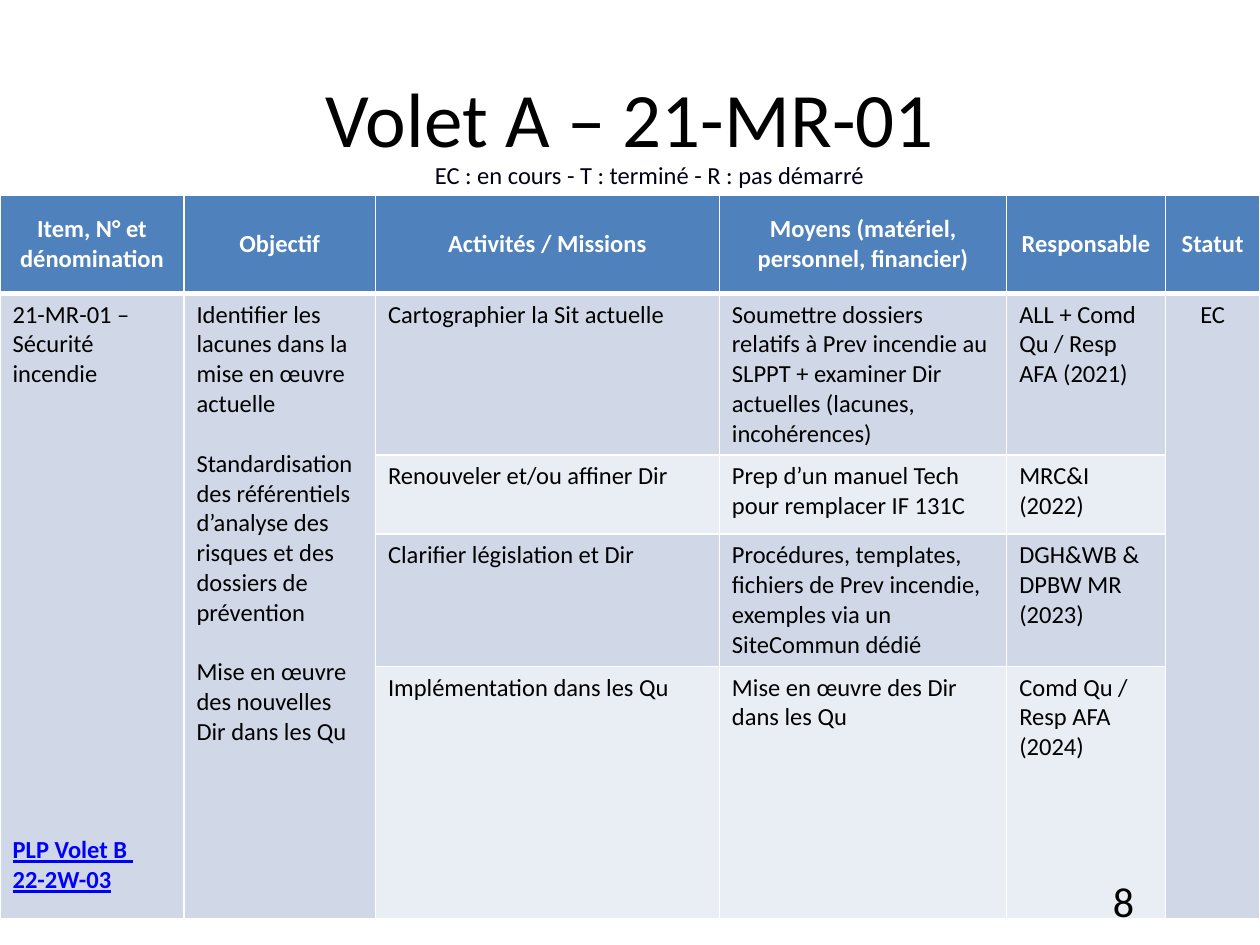
from lxml import etree
from pptx import Presentation
from pptx.dml.color import RGBColor
from pptx.enum import text as t
from pptx.oxml import ns
from pptx.util import Inches, Pt

FONT = "Calibri"
HEAD, DARK, LIGHT = "4F81BD", "D0D8E8", "E9EDF4"
WIDTHS = [1.46, 1.52, 2.73, 2.28, 1.26, 0.75]
HEIGHTS = [0.78, 1.28, 0.63, 1.05, 2]
TITLES = ["Item, N° et dénomination", "Objectif", "Activités / Missions",
          "Moyens (matériel, personnel, financier)", "Responsable", "Statut"]
GOALS = ["Identifier les lacunes dans la mise en œuvre actuelle",
         "Standardisation des référentiels d’analyse des risques "
         "et des dossiers de prévention",
         "Mise en œuvre des nouvelles Dir dans les Qu"]
# Activity, means, person in charge
TASKS = [
    ("Cartographier la Sit actuelle",
     "Soumettre dossiers relatifs à Prev incendie au SLPPT + examiner "
     "Dir actuelles (lacunes, incohérences)",
     "ALL + Comd Qu / Resp AFA (2021)"),
    ("Renouveler et/ou affiner Dir",
     "Prep d’un manuel Tech pour remplacer IF 131C",
     "MRC&I (2022)"),
    ("Clarifier législation et Dir",
     "Procédures, templates, fichiers de Prev incendie, exemples via un "
     "SiteCommun dédié",
     "DGH&WB & DPBW MR (2023)"),
    ("Implémentation dans les Qu",
     "Mise en œuvre des Dir dans les Qu",
     "Comd Qu / Resp AFA (2024)"),
]


def color(code):
    return RGBColor.from_string(code)


def write(frame, words, size=14, ink="000000", bold=False, under=False,
          align=t.PP_ALIGN.LEFT, gap=0, more=False):
    """Fill the frame, or add a paragraph to it when more is set."""
    par = frame.add_paragraph() if more else frame.paragraphs[0]
    par.text = words
    par.alignment = align
    par.space_before = Pt(gap)
    for run in par.runs:
        font = run.font
        font.name, font.size = FONT, Pt(size)
        font.bold, font.underline = bold, under
        font.color.rgb = color(ink)


def label(slide, box, words, anchor=t.MSO_ANCHOR.MIDDLE, **look):
    frame = slide.shapes.add_textbox(*map(Inches, box)).text_frame
    frame.word_wrap = True
    frame.vertical_anchor = anchor
    write(frame, words, **look)


def paint(cell, fill, top=1, bottom=1):
    """White borders, then the fill."""
    props = cell._tc.get_or_add_tcPr()
    for side, width in zip("LRTB", (1, 1, top, bottom)):
        line = etree.SubElement(props, ns.qn("a:ln" + side), w=str(Pt(width)))
        solid = etree.SubElement(line, ns.qn("a:solidFill"))
        etree.SubElement(solid, ns.qn("a:srgbClr"), val="FFFFFF")
    cell.fill.solid()
    cell.fill.fore_color.rgb = color(fill)


def plan(slide, box):
    grid = slide.shapes.add_table(
        len(HEIGHTS), len(WIDTHS), *map(Inches, box)).table
    for col, width in zip(grid.columns, WIDTHS):
        col.width = Inches(width)
    for row, height in zip(grid.rows, HEIGHTS):
        row.height = Inches(height)

    # Header row
    for col, words in enumerate(TITLES):
        cell = grid.cell(0, col)
        paint(cell, HEAD, bottom=3)
        cell.vertical_anchor = t.MSO_ANCHOR.MIDDLE
        write(cell.text_frame, words, ink="FFFFFF", bold=True,
              align=t.PP_ALIGN.CENTER)

    # Task rows, with banded fills
    last = len(TASKS)
    for row, task in enumerate(TASKS, 1):
        for col in range(len(WIDTHS)):
            band = DARK if row % 2 or col in (0, 1, 5) else LIGHT
            paint(grid.cell(row, col), band, top=3 if row == 1 else 1)
        for col, words in enumerate(task, 2):
            write(grid.cell(row, col).text_frame, words)

    # Columns that span all tasks
    for col in (0, 1, 5):
        grid.cell(1, col).merge(grid.cell(last, col))
    item = grid.cell(1, 0).text_frame
    write(item, "21-MR-01 – Sécurité incendie")
    write(item, "PLP Volet B \v22-2W-03", ink="0000FF", bold=True,
          under=True, gap=255, more=True)
    goal = grid.cell(1, 1).text_frame
    for pos, words in enumerate(GOALS):
        write(goal, words, gap=17 if pos else 0, more=pos > 0)
    write(grid.cell(1, 5).text_frame, "EC", align=t.PP_ALIGN.CENTER)


def main():
    deck = Presentation()
    deck.slide_width, deck.slide_height = Inches(10), Inches(7.5)
    slide = deck.slides.add_slide(deck.slide_layouts[6])
    # Title, plan, page number and key
    label(slide, (0.5, 0.3, 9, 1.25), "Volet A – 21-MR-01", size=44,
          align=t.PP_ALIGN.CENTER)
    plan(slide, (0, 1.55, 10, sum(HEIGHTS)))
    label(slide, (7.17, 6.95, 1.93, 0.4), "8", size=24,
          align=t.PP_ALIGN.RIGHT)
    label(slide, (2.4, 1.17, 5.51, 0.38),
          "EC : en cours - T : terminé - R : pas démarré",
          anchor=t.MSO_ANCHOR.BOTTOM, ink="000018", align=t.PP_ALIGN.CENTER)
    deck.save("out.pptx")


if __name__ == "__main__":
    main()
